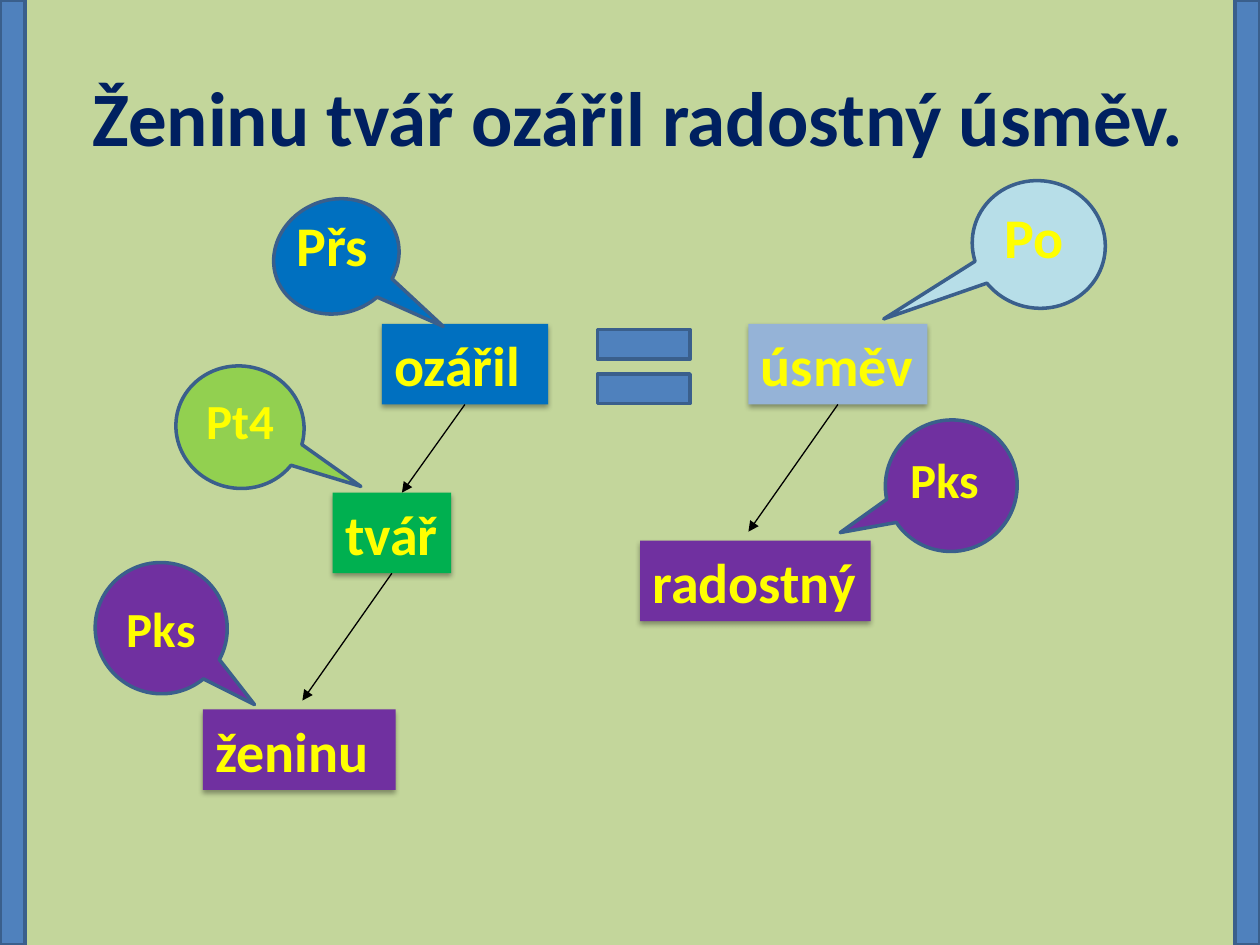
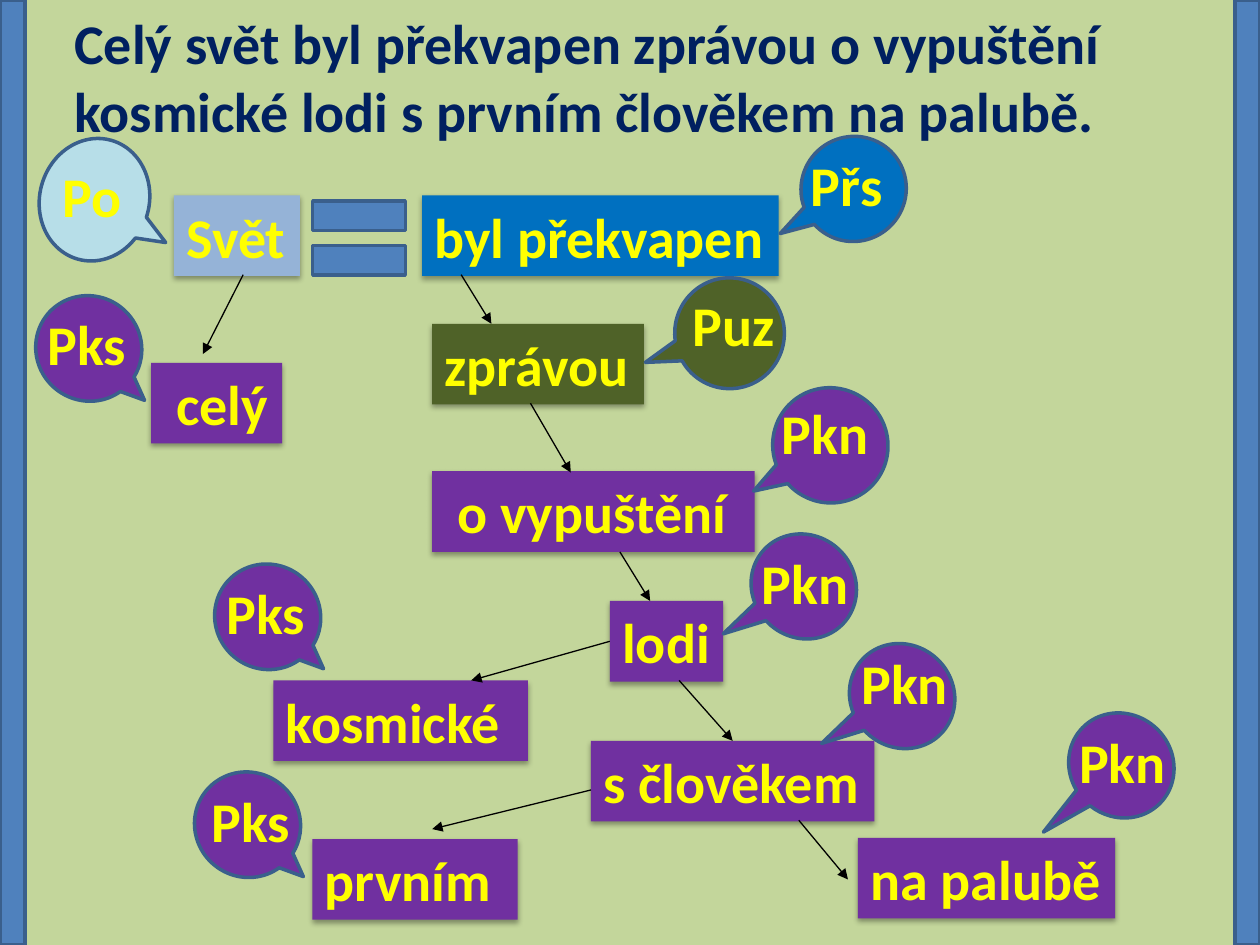
"""Sentence diagrams: two slides of words, their clause roles and dependencies."""
from dataclasses import dataclass, field
from typing import NamedTuple, Optional

import pptx
import pptx.dml.color
import pptx.enum.shapes
import pptx.enum.text
import pptx.oxml
import pptx.oxml.ns
import pptx.util

SHAPE = pptx.enum.shapes.MSO_SHAPE
ALIGN = pptx.enum.text.PP_ALIGN
ANCHOR = pptx.enum.text.MSO_ANCHOR

# Grid: 100 columns by 75 rows over the slide
WIDTH, HEIGHT = pptx.util.Inches(10), pptx.util.Inches(7.5)
COLS, ROWS = 100, 75
BAR_COLS = 2
WORD_ROWS = 6.4
LABEL_COLS, LABEL_ROWS = 9, 6.4
EQUAL_SIDE = 10
SNAP = 0.45  # arrow ends this close to the middle of a side are joined to it


@dataclass(frozen=True)
class Theme:
    font: str = "Calibri"
    background: str = "C3D69B"
    title: str = "002060"
    text: str = "FFFF00"
    accent: str = "4F81BD"
    outline: str = "3A5F8C"
    arrow: str = "000000"
    word_size: int = 32
    small_size: int = 28
    outline_width: float = 2
    arrow_width: float = 0.75


THEME = Theme()


class Role(NamedTuple):
    label: str
    bubble: str
    box: str


SUBJECT = Role("Po", "B7DEE8", "95B3D7")
PREDICATE = Role("Přs", "0070C0", "0070C0")
OBJECT = Role("Pt4", "92D050", "00B050")
ADVERBIAL = Role("Puz", "4F6228", "4F6228")
AGREEING = Role("Pks", "7030A0", "7030A0")
NON_AGREEING = Role("Pkn", "7030A0", "7030A0")


class Box(NamedTuple):
    x: float
    y: float
    w: float
    h: float


class Callout(NamedTuple):
    box: Box
    rotation: float
    tip: tuple[float, float]
    label_x: float  # centre of the label
    label_y: float
    size: int = THEME.word_size


class Word(NamedTuple):
    text: str
    role: Role
    x: float
    y: float
    w: float
    callout: Callout
    indent: float = 1

    def side_middles(self) -> list[tuple[float, float]]:
        """Middles of the sides: top, left, bottom, right."""
        mid_x, mid_y = self.x + self.w / 2, self.y + WORD_ROWS / 2
        return [(mid_x, self.y), (self.x, mid_y),
                (mid_x, self.y + WORD_ROWS), (self.x + self.w, mid_y)]


class Arrow(NamedTuple):
    x1: float
    y1: float
    x2: float
    y2: float


@dataclass
class Diagram:
    title: str
    title_box: Box
    title_size: int
    title_align: Optional[ALIGN]
    equal_at: tuple[float, float]
    words: list[Word] = field(default_factory=list)
    arrows: list[Arrow] = field(default_factory=list)


# Callouts that recur with the same form
def agreeing_bubble(x: float, y: float, label_x: float, label_y: float) -> Callout:
    return Callout(Box(x, y, 8.3, 8.5), 309, (-0.05, 0.71), label_x, label_y)


def non_agreeing_bubble(x: float, y: float, label_x: float, label_y: float,
                        tip: tuple[float, float] = (-0.24, 0.88)) -> Callout:
    return Callout(Box(x, y, 8.6, 8.1), 43.4, tip, label_x, label_y)


def small_bubble(box: Box, rotation: float, tip: tuple[float, float],
                 label_x: float, label_y: float) -> Callout:
    return Callout(box, rotation, tip, label_x, label_y, THEME.small_size)


DIAGRAMS = [
    Diagram(
        "Ženinu tvář ozářil radostný úsměv.", Box(5.7, 2.9, 90, 12.5), 44,
        ALIGN.CENTER, (46.1, 24.1),
        [
            Word("ozářil", PREDICATE, 30.3, 25.7, 13.2,
                 Callout(Box(22.2, 15.3, 9, 10.1), 68.5, (0.92, -0.58), 26.4, 19.4)),
            Word("úsměv", SUBJECT, 59.4, 25.7, 14.2,
                 Callout(Box(77.4, 14.1, 10.1, 10.6), 285.5, (-0.89, -0.97), 82.1, 18.7)),
            Word("ženinu", AGREEING, 16.1, 56.3, 15.3,
                 small_bubble(Box(7.6, 44.6, 10.4, 10.5), 294.2, (-0.24, 0.88), 12.8, 49.8)),
            Word("radostný", AGREEING, 50.8, 42.9, 18.3,
                 small_bubble(Box(70.3, 33.3, 10.4, 10.5), 52, (-0.24, 0.88), 75, 38)),
            Word("tvář", OBJECT, 26.4, 39.1, 9.4,
                 small_bubble(Box(14.2, 28.8, 9.7, 10.2), 283, (-0.25, 1.02), 19.1, 33.3)),
        ],
        [Arrow(66.5, 32, 59.4, 42.2), Arrow(36.6, 32, 31.9, 39.1),
         Arrow(31.1, 45.4, 24, 55.6)],
    ),
    Diagram(
        "Celý svět byl překvapen zprávou o vypuštění kosmické lodi "
        "s prvním člověkem na palubě.", Box(4.9, -0.2, 94.7, 12.5), 32,
        ALIGN.LEFT, (23.5, 13.9),
        [
            Word("byl překvapen", PREDICATE, 33.5, 15.5, 28.3,
                 Callout(Box(63.6, 10.8, 8.3, 8.4), 48.9, (-0.14, 0.8), 67.2, 14.6)),
            Word("Svět", SUBJECT, 13.8, 15.5, 10,
                 Callout(Box(2.6, 11.5, 9.8, 8.7), 285.5, (-0.18, 0.73), 7.3, 15.5)),
            Word("celý", AGREEING, 12, 28.8, 10.4,
                 agreeing_bubble(2.9, 23.4, 6.9, 27.2), indent=2),
            Word("zprávou", ADVERBIAL, 34.3, 25.7, 16.8,
                 Callout(Box(53.5, 22.1, 8.8, 8.7), 84.6, (0.19, 0.79), 58.2, 25.7)),
            Word("o vypuštění", NON_AGREEING, 34.3, 37.4, 25.6,
                 Callout(Box(61.3, 30.8, 9.2, 9.1), 43.4, (-0.21, 0.75), 65.5, 34.3),
                 indent=2),
            Word("lodi", NON_AGREEING, 48.4, 47.7, 9,
                 non_agreeing_bubble(59.5, 42.5, 63.9, 46.2)),
            Word("kosmické", AGREEING, 21.7, 54, 20.2,
                 agreeing_bubble(17.1, 44.7, 21.1, 48.6)),
            Word("s člověkem", NON_AGREEING, 46.9, 58.8, 22.5,
                 non_agreeing_bubble(67.3, 51.2, 71.8, 54.1)),
            Word("prvním", AGREEING, 24.8, 66.6, 16.3,
                 agreeing_bubble(15.5, 61.2, 19.9, 65.1)),
            Word("na palubě", NON_AGREEING, 68.1, 66.5, 20.4,
                 non_agreeing_bubble(84.7, 56.7, 89.1, 60.4, (-0.1, 1))),
        ],
        [Arrow(19.3, 21.8, 16.1, 28.1), Arrow(36.6, 21.8, 39, 25.7),
         Arrow(42.1, 32, 45.3, 37.5), Arrow(49.2, 43.8, 51.6, 47.7),
         Arrow(48.4, 50.9, 37.4, 54), Arrow(53.9, 54, 57.9, 58.8),
         Arrow(46.9, 62.7, 34.3, 65.8), Arrow(63.4, 65.1, 67.3, 69.8)],
    ),
]


# Helpers
def across(cols: float) -> int:
    return round(WIDTH * cols / COLS)


def down(rows: float) -> int:
    return round(HEIGHT * rows / ROWS)


def place(box: Box) -> tuple[int, int, int, int]:
    return across(box.x), down(box.y), across(box.w), down(box.h)


def rgb(value: str) -> pptx.dml.color.RGBColor:
    return pptx.dml.color.RGBColor.from_string(value)


def set_effects(shape, inner: str = "") -> None:
    ns = pptx.oxml.ns.nsdecls("a")
    shape._element.spPr.append(
        pptx.oxml.parse_xml(f"<a:effectLst {ns}>{inner}</a:effectLst>"))


def write(shape, text: str, size: int, color: str, align=None, indent: float = 0) -> None:
    tf = shape.text_frame
    tf.word_wrap = True
    tf.auto_size = pptx.enum.text.MSO_AUTO_SIZE.NONE
    tf.vertical_anchor = ANCHOR.MIDDLE
    tf.margin_left, tf.margin_right = across(indent), 0
    p = tf.paragraphs[0]
    p.text = text
    p.alignment = align
    font = p.font
    font.name, font.size, font.bold = THEME.font, pptx.util.Pt(size), True
    font.color.rgb = rgb(color)


def add_filled(s, kind, box: Box, fill: str, outlined: bool = True):
    sp = s.shapes.add_shape(kind, *place(box))
    sp.fill.solid()
    sp.fill.fore_color.rgb = rgb(fill)
    if outlined:
        sp.line.color.rgb = rgb(THEME.outline)
        sp.line.width = pptx.util.Pt(THEME.outline_width)
        sp.shadow.inherit = False
    else:
        sp.line.fill.background()
    return sp


# Diagram parts
def add_title(s, diagram: Diagram) -> None:
    title = s.shapes.title
    title.left, title.top, title.width, title.height = place(diagram.title_box)
    write(title, diagram.title, diagram.title_size, THEME.title,
          diagram.title_align, indent=1)
    title.text_frame.margin_right = across(1)


def add_word(s, word: Word):
    sp = add_filled(s, SHAPE.RECTANGLE, Box(word.x, word.y, word.w, WORD_ROWS),
                    word.role.box, outlined=False)
    set_effects(sp, '<a:outerShdw blurRad="39400" dist="22900" dir="5400000" '
                    'rotWithShape="0"><a:srgbClr val="000000">'
                    '<a:alpha val="35000"/></a:srgbClr></a:outerShdw>')
    write(sp, word.text, THEME.word_size, THEME.text, ALIGN.LEFT, word.indent)
    return sp


def add_callout(s, role: Role, callout: Callout) -> None:
    sp = add_filled(s, SHAPE.OVAL_CALLOUT, callout.box, role.bubble)
    sp.rotation = callout.rotation
    sp.adjustments[0], sp.adjustments[1] = callout.tip
    label = s.shapes.add_textbox(*place(Box(
        callout.label_x - LABEL_COLS / 2, callout.label_y - LABEL_ROWS / 2,
        LABEL_COLS, LABEL_ROWS)))
    write(label, role.label, callout.size, THEME.text, ALIGN.CENTER)


def add_arrow(s, arrow: Arrow, boxes: list) -> None:
    line = s.shapes.add_connector(
        pptx.enum.shapes.MSO_CONNECTOR.STRAIGHT, across(arrow.x1), down(arrow.y1),
        across(arrow.x2), down(arrow.y2))
    for word, sp in boxes:
        for side, (x, y) in enumerate(word.side_middles()):
            if max(abs(x - arrow.x1), abs(y - arrow.y1)) < SNAP:
                line.begin_connect(sp, side)
            if max(abs(x - arrow.x2), abs(y - arrow.y2)) < SNAP:
                line.end_connect(sp, side)
    line.line.color.rgb = rgb(THEME.arrow)
    line.line.width = pptx.util.Pt(THEME.arrow_width)
    ns = pptx.oxml.ns.nsdecls("a")
    line.line._get_or_add_ln().append(
        pptx.oxml.parse_xml(f'<a:tailEnd {ns} type="triangle"/>'))
    set_effects(line)


def add_diagram(prs, diagram: Diagram) -> None:
    s = prs.slides.add_slide(prs.slide_layouts[5])
    add_title(s, diagram)
    add_filled(s, SHAPE.MATH_EQUAL, Box(*diagram.equal_at, EQUAL_SIDE, EQUAL_SIDE),
               THEME.accent)
    boxes = [(word, add_word(s, word)) for word in diagram.words]
    for word in diagram.words:
        add_callout(s, word.role, word.callout)
    for arrow in diagram.arrows:
        add_arrow(s, arrow, boxes)
    # Side bars
    for x in (0, COLS - BAR_COLS):
        add_filled(s, SHAPE.RECTANGLE, Box(x, 0, BAR_COLS, ROWS), THEME.accent)


def main() -> None:
    prs = pptx.Presentation()
    prs.slide_width, prs.slide_height = WIDTH, HEIGHT
    background = prs.slide_master.background.fill
    background.solid()
    background.fore_color.rgb = rgb(THEME.background)
    for diagram in DIAGRAMS:
        add_diagram(prs, diagram)
    prs.save("out.pptx")


if __name__ == "__main__":
    main()
